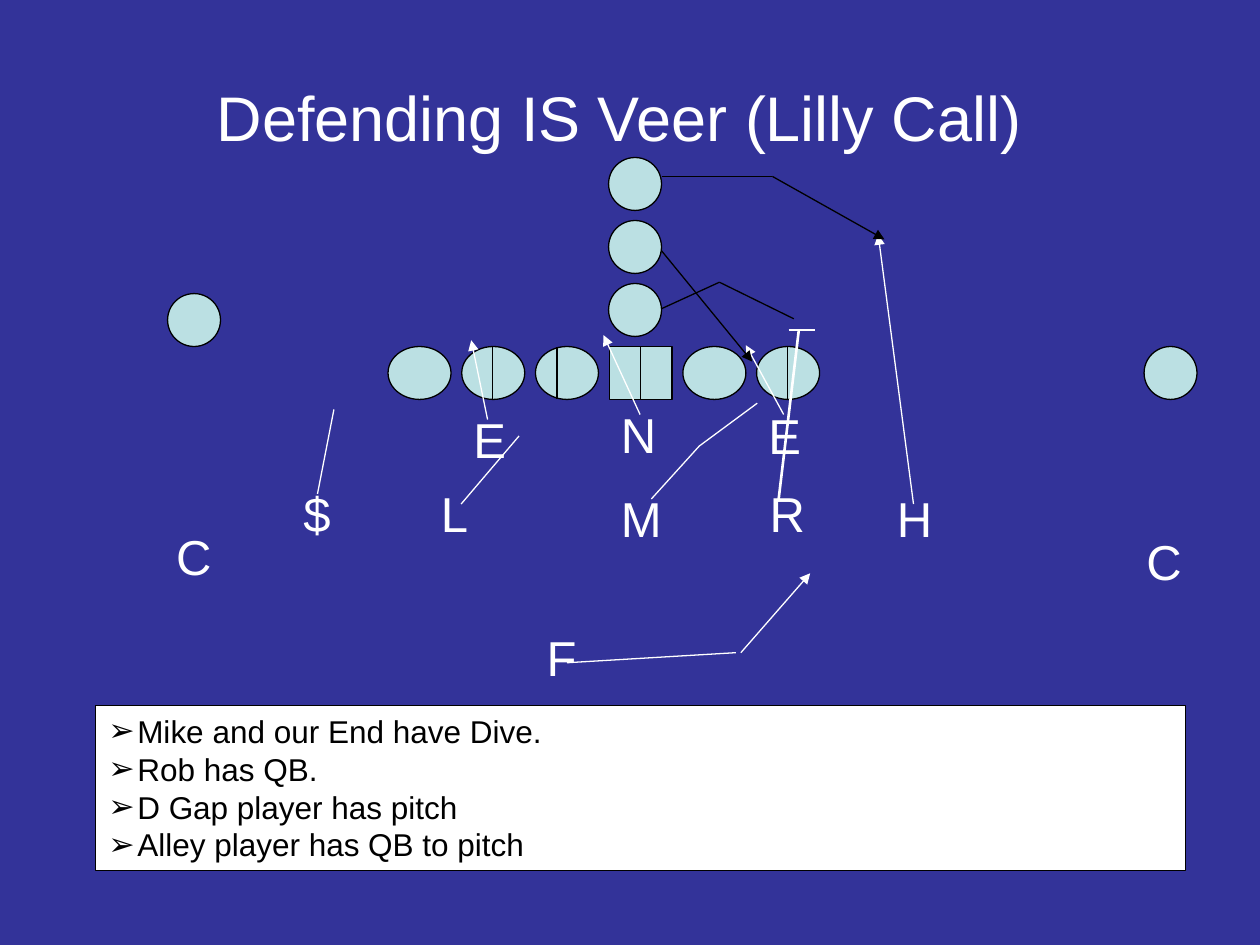
from itertools import pairwise
from lxml.etree import SubElement as Sub
from pptx import Presentation
from pptx.dml.color import RGBColor as Rgb
from pptx.enum.shapes import MSO_CONNECTOR as Link, MSO_SHAPE as Form
from pptx.enum.text import MSO_ANCHOR as Anchor, MSO_AUTO_SIZE as Auto, PP_ALIGN as Align
from pptx.oxml.ns import qn
from pptx.util import Inches, Pt

NAVY, PALE, WHITE, BLACK = "333399", "BBE0E3", "FFFFFF", "000000"
FACE = "Arial"
ROW, TALL, WIDE, STEP, LEFT = 2.75, 0.42, 0.5, 0.585, 3.08
CENTER = 3
BACKS = [(4.83, 1.25), (4.83, 1.75), (4.83, 2.25), (1.33, 2.33), (9.08, 2.75)]
SPLITS = [3.91, 4.42, 6.25]
CALLS = [
    ("E", 3.66, 3.2, 0.5), ("N", 4.83, 3.16, 0.5), ("E", 6, 3.17, 0.5),
    ("L", 3.4, 3.79, 0.42), ("M", 4.83, 3.83, 0.58), ("R", 6.01, 3.79, 0.58),
    ("C", 1.3, 4.13, 0.58), ("$", 2.31, 3.79, 0.42), ("H", 7.02, 3.83, 0.5),
    ("C", 9, 4.17, 0.42), ("F", 4.24, 4.93, 0.42),
]
PATHS = [
    (WHITE, 0.75, True, [(5.08, 3.29), (4.79, 2.66)]),
    (WHITE, 0.75, True, [(3.87, 3.33), (3.74, 2.7)]),
    (WHITE, 0.75, True, [(6.22, 3.29), (5.92, 2.74)]),
    (WHITE, 0.75, True, [(7.25, 4), (6.97, 1.86)]),
    (WHITE, 0.75, False, [(2.52, 3.92), (2.65, 3.25)]),
    (BLACK, 0.75, True, [(5.25, 1.99), (5.97, 2.87)]),
    (WHITE, 1.5, False, [(6.18, 3.96), (6.34, 2.62)]),
    (WHITE, 1.5, False, [(6.26, 2.62), (6.47, 2.62)]),
    (WHITE, 0.75, False, [(5.17, 3.96), (5.55, 3.54), (6.01, 3.2)]),
    (WHITE, 0.75, False, [(3.66, 4), (4.12, 3.46)]),
    (BLACK, 0.75, False, [(5.25, 2.45), (5.71, 2.24), (6.3, 2.53)]),
    (BLACK, 0.75, True, [(5.25, 1.4), (6.13, 1.4), (7.02, 1.9)]),
    (WHITE, 0.75, False, [(4.5, 5.26), (5.84, 5.18)]),
    (WHITE, 0.75, True, [(5.88, 5.18), (6.43, 4.55)]),
]
NOTES = [
    "Mike and our End have Dive.",
    "Rob has QB.",
    "D Gap player has pitch",
    "Alley player has QB to pitch",
]


def apply(item, vals):
    for key, val in vals.items():
        setattr(item, key, val)


def paint(fill, tint):
    fill.solid()
    fill.fore_color.rgb = Rgb.from_string(tint)


def edge(shape, tint, width=0.75):
    paint(shape.line.fill, tint)
    shape.line.width = Pt(width)


def place(shape, *box):
    apply(shape, dict(zip(("left", "top", "width", "height"), map(Inches, box))))


def write(para, text, size, tint, **vals):
    run = para.add_run()
    run.text = text
    apply(run.font, {"size": Pt(size), "name": FACE})
    paint(run.font.fill, tint)
    apply(para, vals)


def add_man(slide, form, *box):
    man = slide.shapes.add_shape(form, *map(Inches, box))
    man.shadow.inherit = False
    paint(man.fill, PALE)
    edge(man, BLACK)
    return man


def add_line(slide, start, end, tint, width=0.75, tip=False):
    line = slide.shapes.add_connector(Link.STRAIGHT, *map(Inches, start + end))
    edge(line, tint, width)
    if tip:
        Sub(line.line._ln, qn("a:tailEnd"), type="triangle")
    Sub(line._element.spPr, qn("a:effectLst"))
    return line


def add_path(slide, tint, width, tip, spots):
    for start, end in pairwise(spots):
        add_line(slide, start, end, tint, width, tip and end == spots[-1])


def add_call(slide, text, left, top, width):
    box = slide.shapes.add_textbox(*map(Inches, (left, top, width, 0.57)))
    apply(box.text_frame, {"word_wrap": True, "auto_size": Auto.SHAPE_TO_FIT_TEXT})
    write(box.text_frame.paragraphs[0], text, 28, WHITE, space_before=Pt(3))


def set_title(slide, text):
    title = slide.shapes.title
    place(title, 0.33, 0.3, 9.17, 1.25)
    apply(title.text_frame, {"vertical_anchor": Anchor.MIDDLE, "auto_size": Auto.NONE})
    write(title.text_frame.paragraphs[0], text, 36, WHITE, alignment=Align.CENTER)


def set_notes(slide, lines):
    body = slide.placeholders[1]
    place(body, 0.76, 5.6, 8.65, 1.31)
    paint(body.fill, WHITE)
    edge(body, BLACK)
    frame = body.text_frame
    apply(frame, {"vertical_anchor": Anchor.TOP, "auto_size": Auto.NONE, "word_wrap": True})
    for num, text in enumerate(lines):
        para = frame.add_paragraph() if num else frame.paragraphs[0]
        write(para, text, 18, BLACK, space_before=Pt(0))
        props = para._p.get_or_add_pPr()
        props.set("marL", str(Inches(0.23)))
        props.set("indent", str(-Inches(0.23)))
        Sub(props, qn("a:buFont"), typeface=FACE)
        Sub(props, qn("a:buChar"), char="➢")


def add_front(slide):
    for num in range(6):
        form = Form.RECTANGLE if num == CENTER else Form.OVAL
        man = add_man(slide, form, LEFT + num * STEP, ROW, WIDE, TALL)
        if num == CENTER:
            mid = LEFT + num * STEP + WIDE / 2
            line = add_line(slide, (mid, ROW), (mid, ROW + TALL), BLACK)
            line.begin_connect(man, 0)
            line.end_connect(man, 2)
    for left in SPLITS:
        add_line(slide, (left, ROW), (left, ROW + TALL), BLACK)


def main():
    deck = Presentation()
    apply(deck, {"slide_width": Inches(10), "slide_height": Inches(7.5)})
    slide = deck.slides.add_slide(deck.slide_layouts[1])
    paint(slide.background.fill, NAVY)
    set_title(slide, "Defending IS Veer (Lilly Call)")
    set_notes(slide, NOTES)
    add_front(slide)
    for spot in BACKS:
        add_man(slide, Form.OVAL, *spot, TALL, TALL)
    for call in CALLS:
        add_call(slide, *call)
    for route in PATHS:
        add_path(slide, *route)
    deck.save("out.pptx")


if __name__ == "__main__":
    main()
